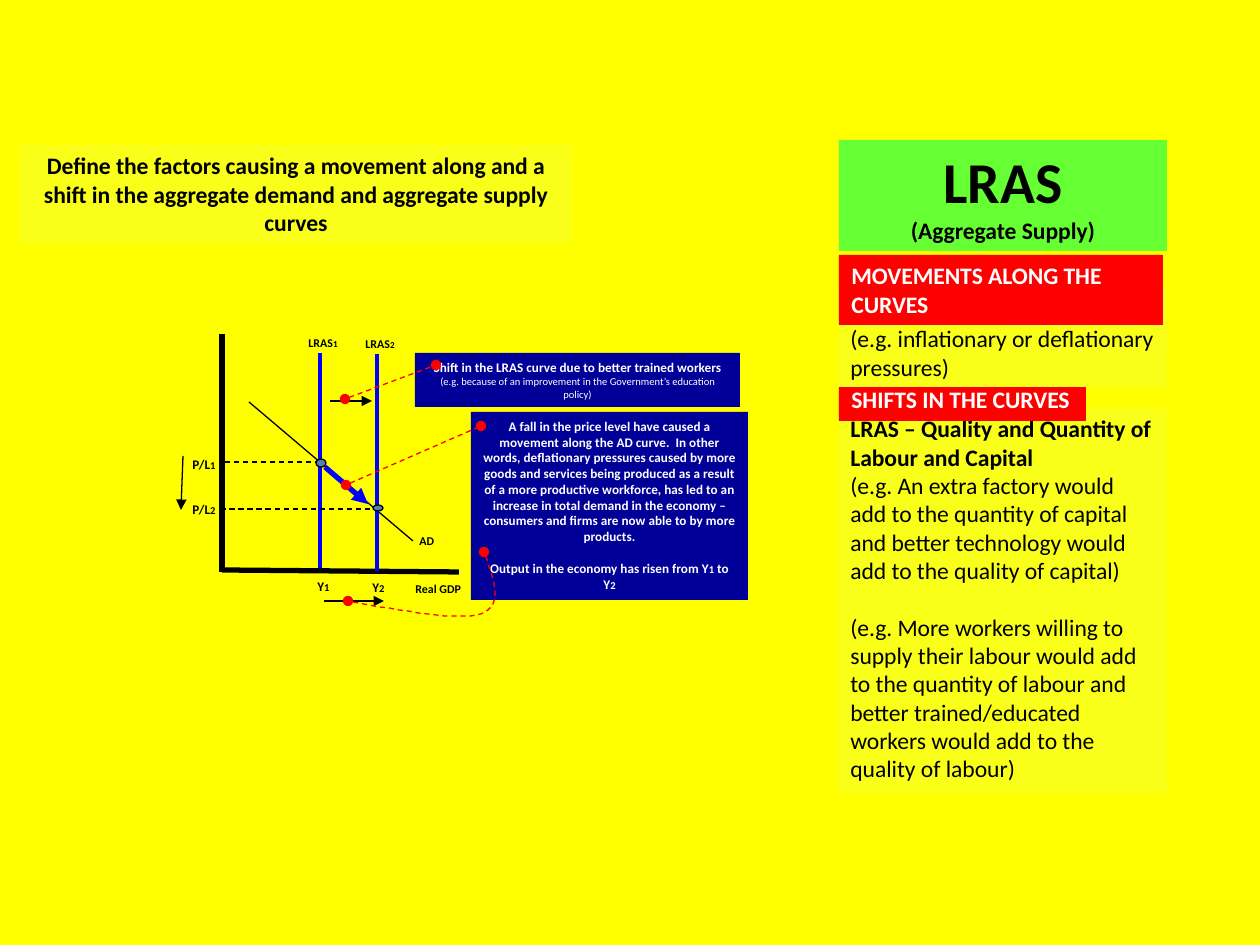
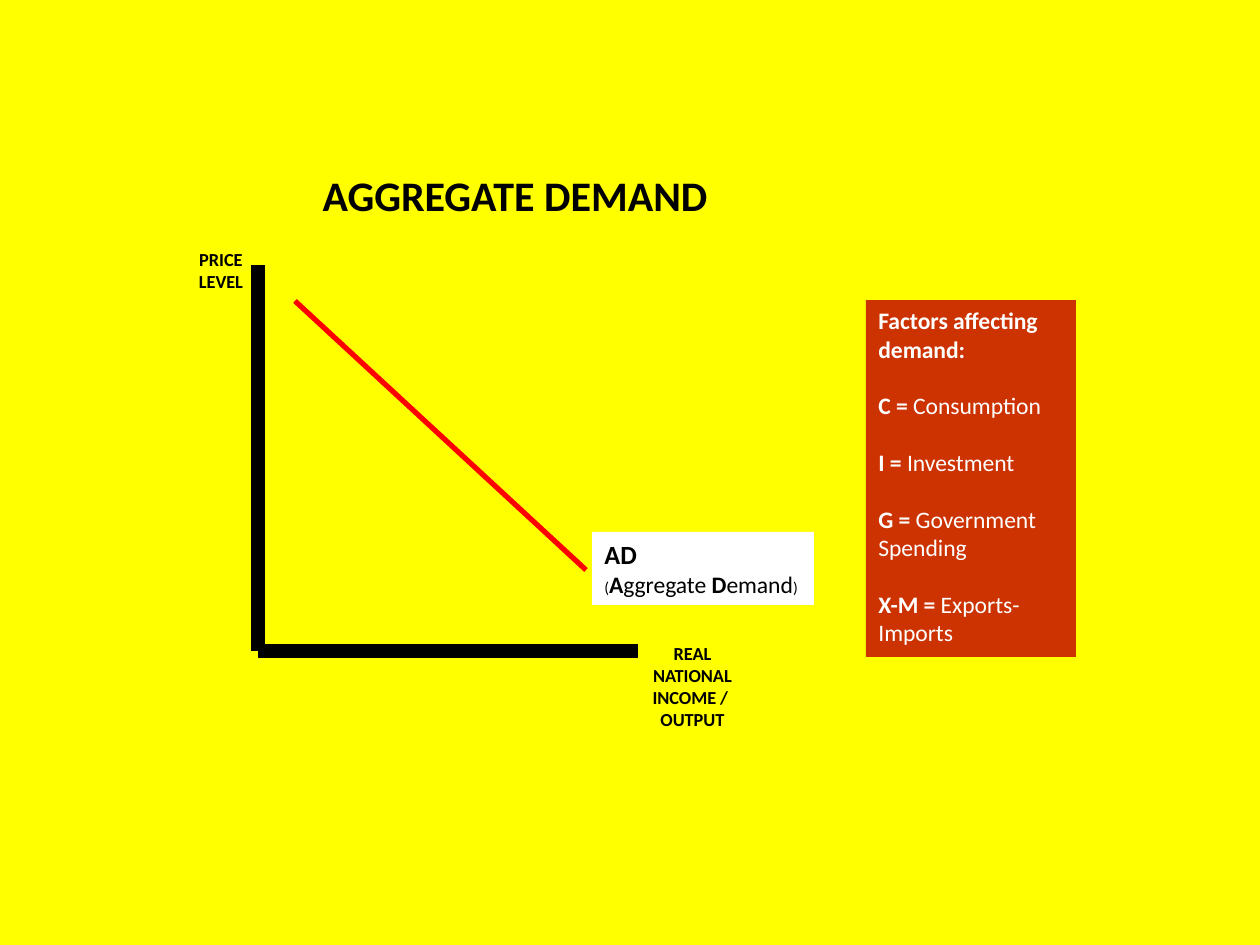
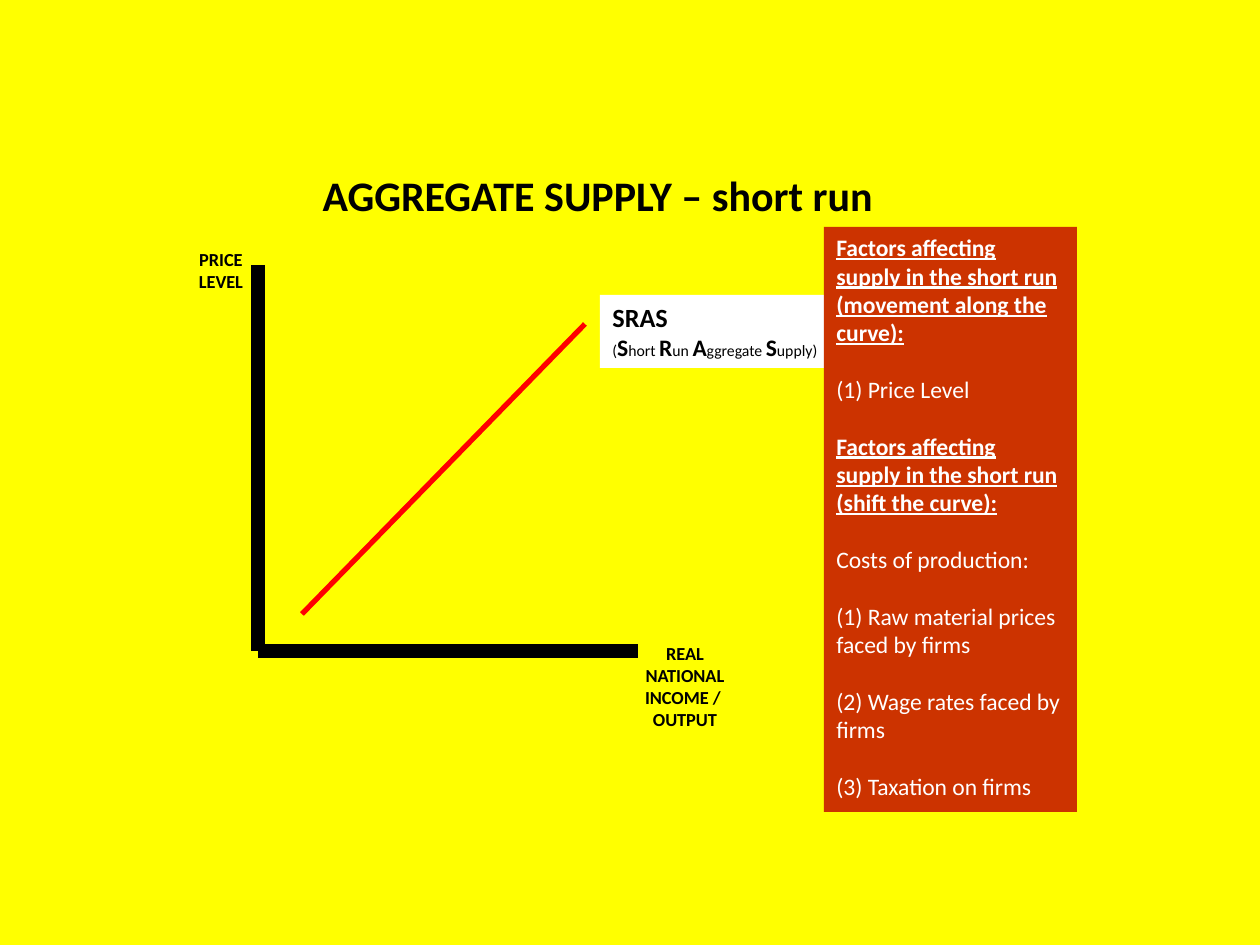
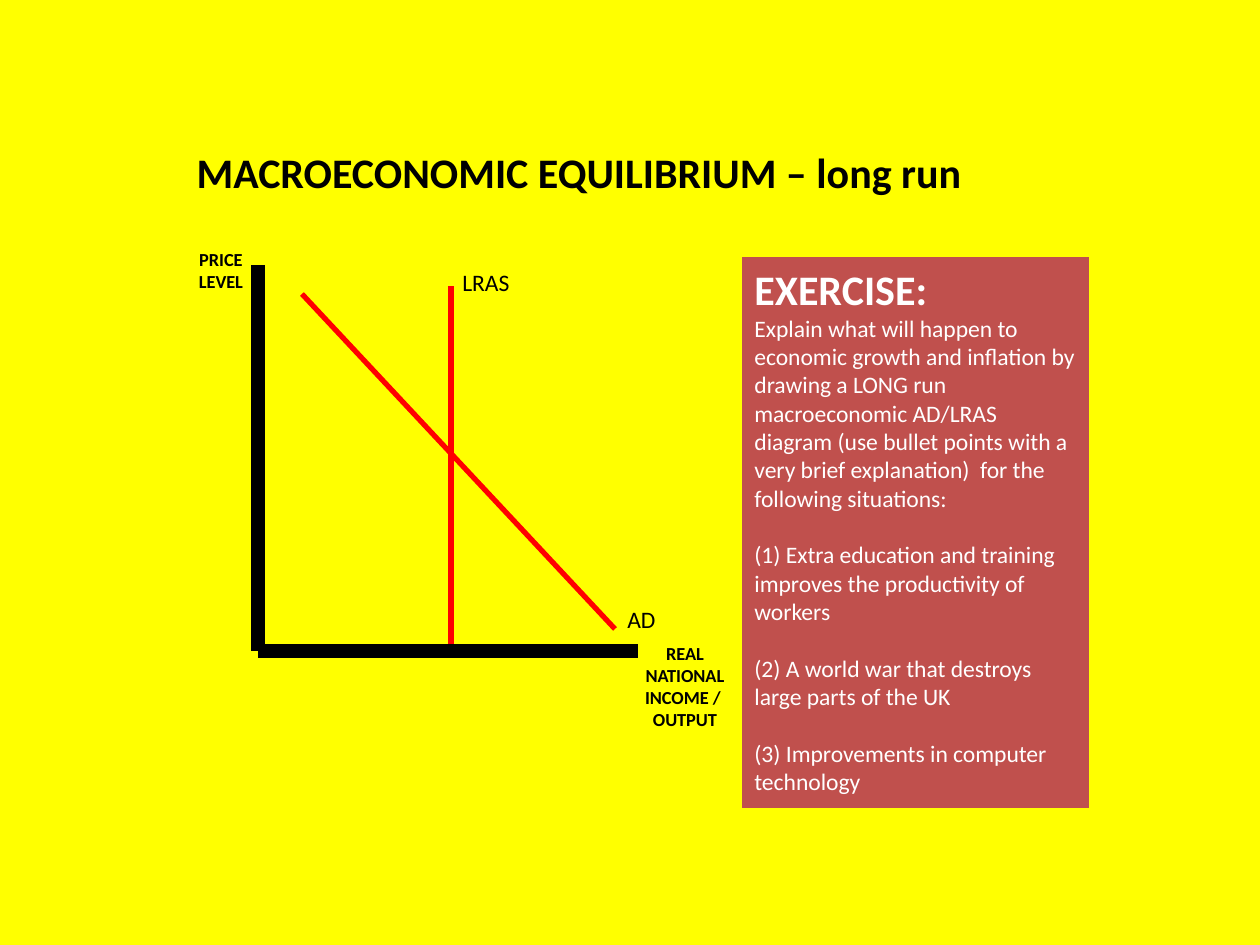
from pptx import Presentation
from pptx.dml.color import RGBColor
from pptx.enum.dml import MSO_LINE
from pptx.enum.shapes import MSO_CONNECTOR, MSO_SHAPE
from pptx.enum.text import MSO_ANCHOR, MSO_AUTO_SIZE, PP_ALIGN
from pptx.oxml.ns import qn
from pptx.util import Emu, Pt
from lxml import etree

PX = 914400 / 126
FONT = "Calibri"
DASH = MSO_LINE.DASH
LEFT, MID = PP_ALIGN.LEFT, PP_ALIGN.CENTER
TOP, LOW = MSO_ANCHOR.TOP, MSO_ANCHOR.BOTTOM
FIXED = MSO_AUTO_SIZE.NONE
RECT, OVAL = MSO_SHAPE.RECTANGLE, MSO_SHAPE.OVAL
STRAIGHT = MSO_CONNECTOR.STRAIGHT

YELLOW = RGBColor(0xFF, 0xFF, 0x00)
LEMON = RGBColor(0xFA, 0xFF, 0x19)
GREEN = RGBColor(0x66, 0xFF, 0x33)
RED = RGBColor(0xFF, 0x00, 0x00)
RUST = RGBColor(0xCC, 0x33, 0x00)
BRICK = RGBColor(0xC0, 0x50, 0x4D)
BLUE = RGBColor(0x00, 0x00, 0xFF)
NAVY = RGBColor(0x00, 0x00, 0x99)
STEEL = RGBColor(0x4F, 0x81, 0xBD)
BLACK = RGBColor(0x00, 0x00, 0x00)
WHITE = RGBColor(0xFF, 0xFF, 0xFF)

THIN = {"bold": False}
SMALL = {"bold": False, "size": 9}
TINY = {"size": 6}
BIG = {"size": 15}
LINED = {"underline": True}

AIM = ("Define the factors causing a movement along and a shift in the "
       "aggregate demand and aggregate supply curves")
CARDS = [
    ((838, 408, 329, 385), [
        "LRAS – Quality and Quantity of Labour and Capital",
        [("(e.g. An extra factory would add to the quantity of capital and better "
          "technology would add to the quality of capital)", THIN)],
        [("(e.g. More workers willing to supply their labour would add to the quantity "
          "of labour and better trained/educated workers would add to the quality of "
          "labour)", THIN)]],
     {"fill": LEMON, "gaps": [2]}),
    ((839, 140, 328, 111), [[("LRAS", {"size": 33})], "(Aggregate Supply)"],
     {"fill": GREEN, "align": MID}),
    ((839, 379, 247, 42), ["SHIFTS IN THE CURVES"],
     {"fill": RED, "color": WHITE, "wrap": False}),
    ((838, 289, 329, 98), ["(e.g. inflationary or deflationary pressures)"],
     {"fill": LEMON, "bold": False, "anchor": LOW}),
    ((839, 255, 324, 70), ["MOVEMENTS ALONG THE CURVES"],
     {"fill": RED, "color": WHITE}),
]
TAGS = [
    ((296, 329, 55, 26), "LRAS", "1", 6.8, 5.2),
    ((353, 330, 55, 26), "LRAS", "2", 6.8, 5.2),
    ((403, 575, 71, 26), "Real GDP", "", 6.8, 6),
    ((407, 527, 40, 26), "AD", "", 6.8, 6),
    ((180, 450, 49, 29), "P/L", "1", 7.5, 6),
    ((180, 495, 49, 29), "P/L", "2", 7.5, 6),
    ((305, 572, 38, 29), "Y", "1", 7.5, 6),
    ((360, 573, 38, 29), "Y", "2", 7.5, 6),
]
LINES = [
    ((320, 353, 320, 570), BLUE, 2, {}),
    ((222, 570, 459, 572), BLACK, 3, {}),
    ((222, 334, 222, 572), BLACK, 3, {}),
    ((320, 462, 222, 462), BLACK, 0.75, {"dash": DASH}),
    ((379, 509, 222, 509), BLACK, 0.75, {"dash": DASH}),
    ((183, 456, 181, 510), BLACK, 0.75, {"tail": "triangle"}),
    ((249, 402, 413, 541), BLACK, 0.75, {}),
    ((324, 601, 384, 601), BLACK, 0.75, {"tail": "triangle"}),
    ((330, 401, 372, 401), BLACK, 0.75, {"tail": "triangle"}),
    ((377, 354, 377, 571), BLUE, 2, {}),
]
DOTS = [(373, 505, 10, 6), (316, 459, 10, 8)]
NOTES = [
    ((415, 353, 325, 54), [
        "Shift in the LRAS curve due to better trained workers",
        [("(e.g. because of an improvement in the Government’s education policy)",
          {"size": 6, "bold": False})]], {}),
    ((471, 412, 277, 188), [
        "A fall in the price level have caused a movement along the AD curve.  In other "
        "words, deflationary pressures caused by more goods and services being produced "
        "as a result of a more productive workforce, has led to an increase in total "
        "demand in the economy – consumers and firms are now able to by more products.",
        [("Output in the economy has risen from Y", {}), ("1", TINY), (" to Y", {}),
         ("2", TINY)]], {"gaps": [1]}),
]
ENDS = {"dash": DASH, "head": "oval", "tail": "oval"}
LINKS = [
    ((345, 399, 436, 365), RED, 0.75, ENDS),
    ((325, 467, 368, 504), BLUE, 3, {"tail": "triangle"}),
    ((346, 485, 481, 426), RED, 0.75, ENDS),
]
BENDS = [
    ((484, 552), (494, 578), (504, 605), (481, 614)),
    ((481, 614), (459, 621), (403, 611), (348, 601)),
]

GRAPHS = [
    {"title": ("AGGREGATE DEMAND", (310, 163, 413, 63)),
     "wide": 141,
     "curves": [(295, 301, 586, 570)],
     "labels": [((592, 532, 222, 73), [
         [("AD", BIG)],
         [("(", SMALL), ("A", {}), ("ggregate ", THIN), ("D", {}), ("emand", THIN),
          (")", SMALL)]], {"fill": WHITE})],
     "panel": ((866, 300, 210, 357), [
         "Factors affecting demand:",
         [("C = ", {}), ("Consumption", THIN)],
         [("I = ", {}), ("Investment", THIN)],
         [("G = ", {}), ("Government Spending", THIN)],
         [("X-M = ", {}), ("Exports-Imports", THIN)]],
         {"fill": RUST, "gaps": [1, 2, 3, 4]})},
    {"title": ("AGGREGATE SUPPLY – short run", (310, 163, 581, 63)),
     "wide": 126,
     "curves": [(302, 614, 585, 324)],
     "labels": [((600, 295, 233, 73), [
         [("SRAS", BIG)],
         [("(", SMALL), ("S", {}), ("hort ", SMALL), ("R", {}), ("un ", SMALL),
          ("A", {}), ("ggregate ", SMALL), ("S", {}), ("upply)", SMALL)]],
         {"fill": WHITE})],
     "panel": ((824, 227, 253, 585), [
         [("Factors affecting supply in the short run (movement along the curve):", LINED)],
         [("(1) Price Level", THIN)],
         [("Factors affecting supply in the short run (shift the curve):", LINED)],
         [("Costs of production:", THIN)],
         [("(1) Raw material prices faced by firms", THIN)],
         [("(2) Wage rates faced by firms", THIN)],
         [("(3) Taxation on firms", THIN)]],
         {"fill": RUST, "gaps": [1, 2, 3, 4, 5, 6]})},
    {"title": ("MACROECONOMIC EQUILIBRIUM – long run", (184, 140, 798, 63)),
     "wide": 126,
     "curves": [(451, 644, 451, 286), (615, 629, 302, 294)],
     "labels": [((450, 262, 73, 42), ["LRAS"], {"bold": False}),
                ((615, 599, 54, 42), ["AD"], {"bold": False})],
     "panel": ((742, 257, 347, 551), [
         [("EXERCISE:", {"size": 24, "bold": True})],
         "Explain what will happen to economic growth and inflation by drawing a LONG run "
         "macroeconomic AD/LRAS diagram (use bullet points with a very brief explanation)  "
         "for the following situations:",
         "(1) Extra education and training improves the productivity of workers",
         "(2) A world war that destroys large parts of the UK",
         "(3) Improvements in computer technology"],
         {"fill": BRICK, "bold": False, "gaps": [2, 3, 4]})},
]
AXES = [(258, 265, 258, 651), (258, 651, 638, 651)]


def scale(nums):
    return [Emu(round(n * PX)) for n in nums]


def put_text(slide, spot, paras, size=13.5, color=BLACK, bold=True, align=LEFT,
             fill=None, wrap=True, anchor=TOP, gaps=(), shape=None):
    area = scale(spot)
    if shape is not None:
        shape.left, shape.top, shape.width, shape.height = area
    elif fill is None:
        shape = slide.shapes.add_textbox(*area)
    else:
        shape = slide.shapes.add_shape(RECT, *area)
        shape.shadow.inherit = False
        shape.line.fill.background()
    if fill is not None:
        shape.fill.solid()
        shape.fill.fore_color.rgb = fill
    frame = shape.text_frame
    frame.auto_size = FIXED
    frame.word_wrap = wrap
    frame.vertical_anchor = anchor
    for i, runs in enumerate(paras):
        para = frame.add_paragraph() if i else frame.paragraphs[0]
        para.alignment = align
        para.space_before = Pt(size * 1.2 if i in gaps else 0)
        for words, style in [(runs, {})] if isinstance(runs, str) else runs:
            run = para.add_run()
            run.text = words
            font = run.font
            font.name = FONT
            font.size = Pt(style.get("size", size))
            font.bold = style.get("bold", bold)
            font.underline = style.get("underline")
            font.color.rgb = color


def style_line(shape, color, width, dash=None, head=None, tail=None):
    shape.line.color.rgb = color
    shape.line.width = Pt(width)
    if dash:
        shape.line.dash_style = dash
    stroke = shape.element.spPr.find(qn("a:ln"))
    for tag, kind in (("a:headEnd", head), ("a:tailEnd", tail)):
        if kind:
            etree.SubElement(stroke, qn(tag), type=kind)


def draw_line(slide, ends, color, width, **style):
    line = slide.shapes.add_connector(STRAIGHT, *scale(ends))
    style_line(line, color, width, **style)
    etree.SubElement(line.element.spPr, qn("a:effectLst"))


def draw_dot(slide, spot):
    dot = slide.shapes.add_shape(OVAL, *scale(spot))
    dot.shadow.inherit = False
    dot.fill.solid()
    dot.fill.fore_color.rgb = STEEL
    style_line(dot, BLACK, 0.75)


def bend_point(bend, t):
    parts = ((1 - t) ** 3, 3 * t * (1 - t) ** 2, 3 * t * t * (1 - t), t ** 3)
    return tuple(sum(w * p[k] for w, p in zip(parts, bend)) for k in (0, 1))


def draw_bend(slide, bends, steps=16):
    points = [bend_point(b, n / steps) for b in bends for n in range(1, steps + 1)]
    build = slide.shapes.build_freeform(*bends[0][0], scale=PX)
    build.add_line_segments(points, close=False)
    shape = build.convert_to_shape()
    shape.shadow.inherit = False
    shape.fill.background()
    style_line(shape, RED, 0.75, **ENDS)


def new_slide(deck, words, spot, **style):
    slide = deck.slides.add_slide(deck.slide_layouts[5])
    put_text(slide, spot, [words], shape=slide.shapes.title, **style)
    return slide


def add_shift(deck):
    slide = new_slide(deck, AIM, (20, 145, 552, 98), fill=LEMON, align=MID)
    for spot, paras, style in CARDS:
        put_text(slide, spot, paras, **style)
    for ends, color, width, style in LINES:
        draw_line(slide, ends, color, width, **style)
    for spot, name, mark, size, low in TAGS:
        runs = [(name, {})] + ([(mark, {"size": low})] if mark else [])
        put_text(slide, spot, [runs], size=size, wrap=False)
    for spot in DOTS:
        draw_dot(slide, spot)
    for spot, paras, style in NOTES:
        put_text(slide, spot, paras, size=7.5, color=WHITE, align=MID, fill=NAVY, **style)
    draw_bend(slide, BENDS)
    for ends, color, width, style in LINKS:
        draw_line(slide, ends, color, width, **style)


def add_graph(deck, graph):
    slide = new_slide(deck, *graph["title"], size=24, wrap=False)
    for ends in AXES:
        draw_line(slide, ends, BLACK, 8)
    for ends in graph["curves"]:
        draw_line(slide, ends, RED, 3)
    for spot, paras, style in graph["labels"]:
        put_text(slide, spot, paras, wrap=False, **style)
    put_text(slide, (176, 242, 90, 57), ["PRICE LEVEL"], size=10.5, align=MID)
    put_text(slide, (622, 636, graph["wide"], 102),
             ["REAL NATIONAL INCOME / ", "OUTPUT"], size=10.5, align=MID)
    spot, paras, style = graph["panel"]
    put_text(slide, spot, paras, color=WHITE, **style)


def main():
    deck = Presentation()
    deck.slide_width, deck.slide_height = scale((1260, 945))
    back = deck.slide_master.background.fill
    back.solid()
    back.fore_color.rgb = YELLOW
    add_shift(deck)
    for graph in GRAPHS:
        add_graph(deck, graph)
    deck.save("out.pptx")


if __name__ == "__main__":
    main()
